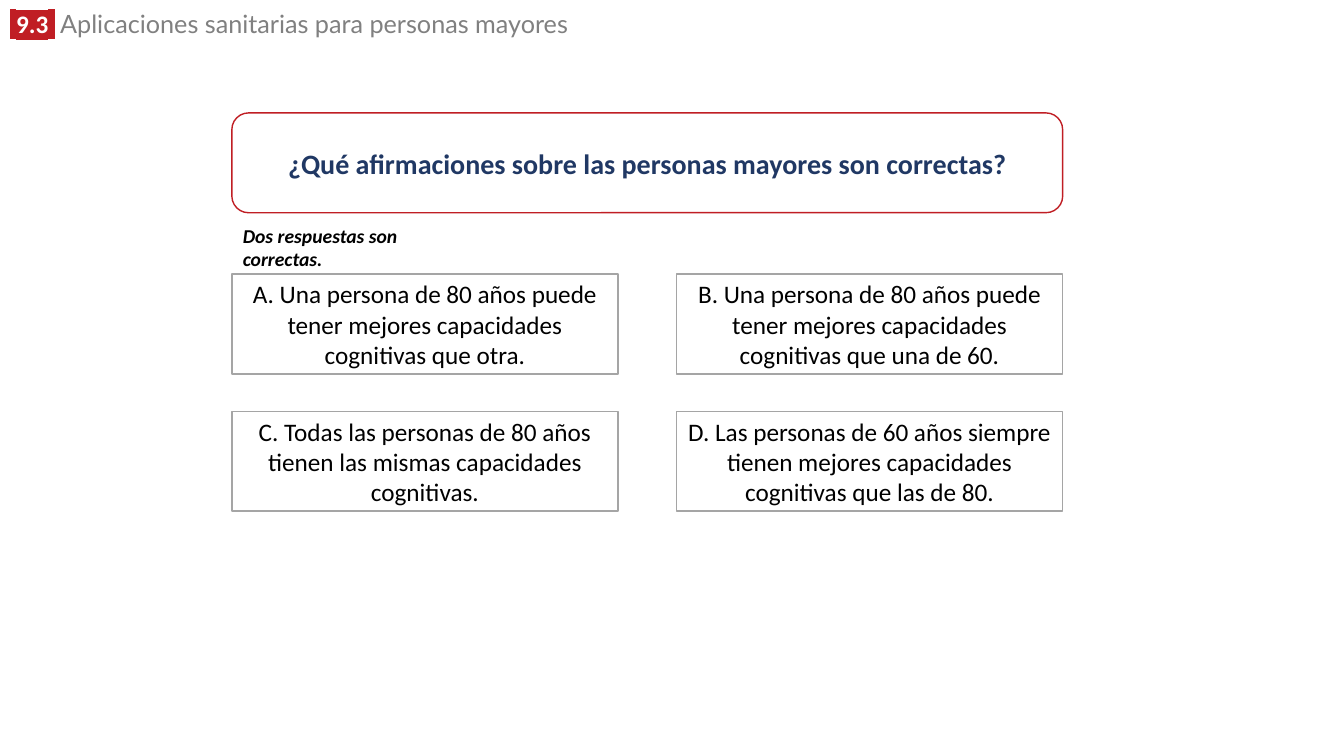
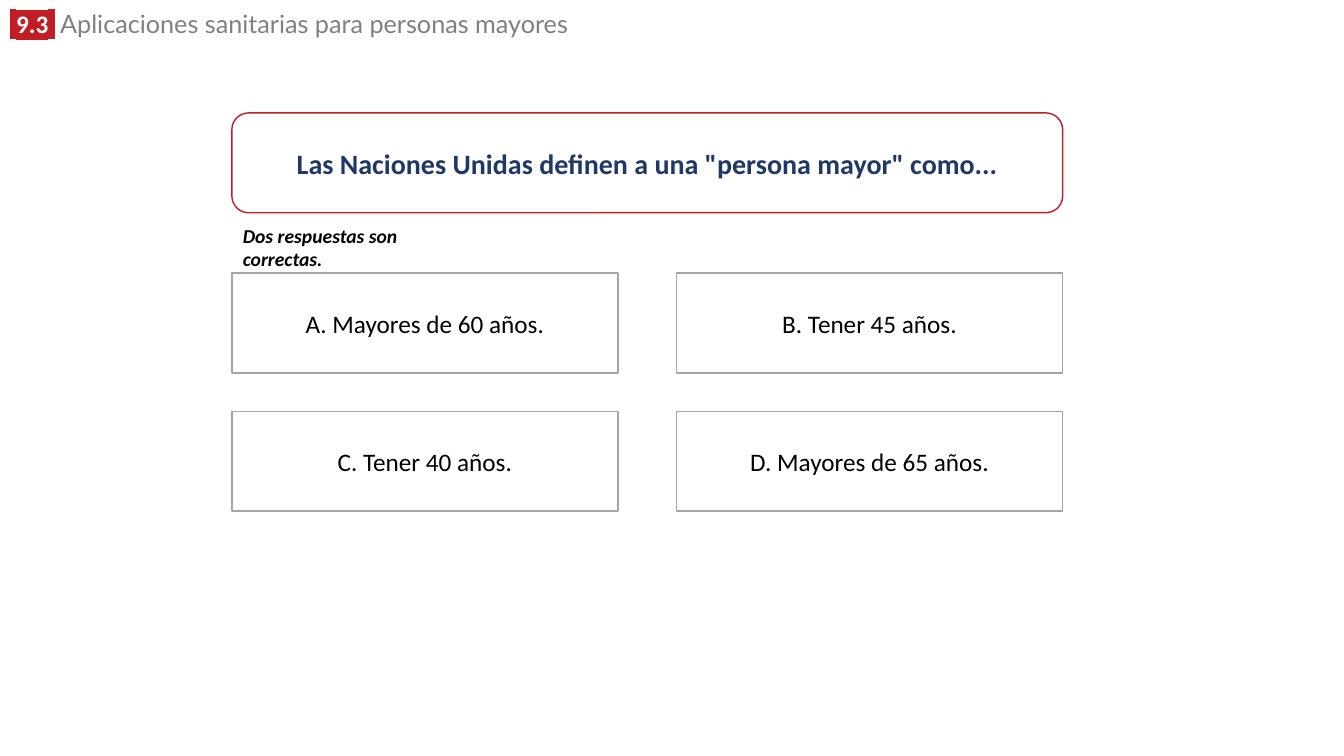
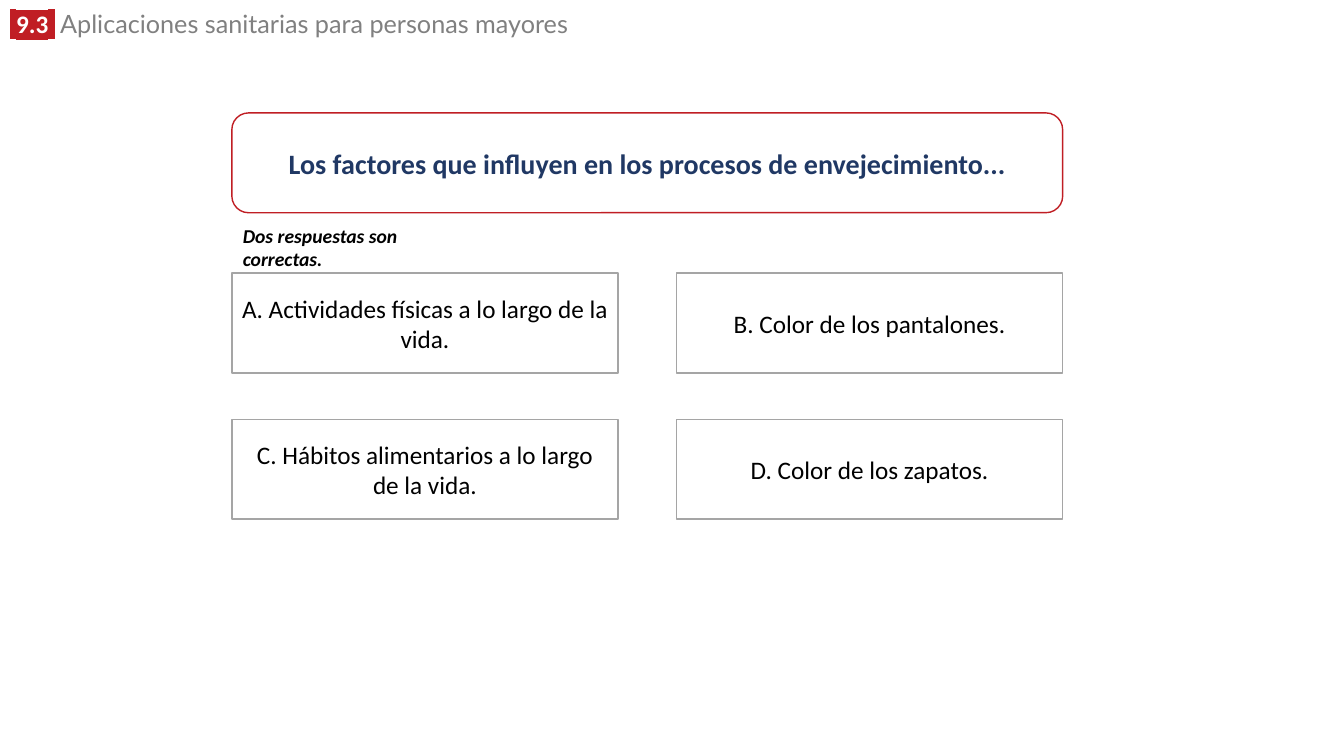
from dataclasses import dataclass

from lxml import etree
from pptx import Presentation
from pptx.dml.color import RGBColor
from pptx.enum.shapes import MSO_SHAPE
from pptx.enum.text import MSO_ANCHOR, MSO_AUTO_SIZE, PP_ALIGN
from pptx.oxml.ns import qn
from pptx.util import Inches, Pt

RECTANGLE, ROUNDED = MSO_SHAPE.RECTANGLE, MSO_SHAPE.ROUNDED_RECTANGLE
TOP, MIDDLE = MSO_ANCHOR.TOP, MSO_ANCHOR.MIDDLE
LEFT, CENTER = PP_ALIGN.LEFT, PP_ALIGN.CENTER
NO_AUTOFIT = MSO_AUTO_SIZE.NONE
TITLE_ONLY = 5


@dataclass(frozen=True)
class Theme:
    red: str = "C01E24"
    navy: str = "203864"
    gray: str = "808080"
    border: str = "A5A5A5"
    black: str = "000000"
    white: str = "FFFFFF"
    body_font: str = "Calibri"
    header_font: str = "Lato"
    header_size: int = 18
    question_size: int = 20
    answer_size: int = 18
    hint_size: int = 14


THEME = Theme()

# Grid, in inches: two answer columns below a question of full grid width
SLIDE_WIDTH, SLIDE_HEIGHT = 13.33, 7.5
GRID_LEFT, GRID_WIDTH = 2.3, 8.24
COLUMN_GAP = 0.58
COLUMN_WIDTH = (GRID_WIDTH - COLUMN_GAP) / 2
BOX_HEIGHT = 0.99
QUESTION_TOP = 1.12
HEADER_BOX = (0, 0.09, 9.52, 0.35)
HINT_BOX = (2.31, 2.17, 2.24, 0.57)

SECTION_NUMBER = "9.3"
SECTION_NAME = "Aplicaciones sanitarias para personas mayores"
HINT = "Dos respuestas son correctas."

# Question, tops of the two answer rows, answers in reading order
QUIZ = [
    ("¿Qué afirmaciones sobre las personas mayores son correctas?", (2.72, 4.08), [
        "A. Una persona de 80 años puede tener mejores capacidades cognitivas que otra.",
        "B. Una persona de 80 años puede tener mejores capacidades cognitivas que una de 60.",
        "C. Todas las personas de 80 años tienen las mismas capacidades cognitivas.",
        "D. Las personas de 60 años siempre tienen mejores capacidades cognitivas que las de 80.",
    ]),
    ('Las Naciones Unidas definen a una "persona mayor" como...', (2.71, 4.08), [
        "A. Mayores de 60 años.",
        "B. Tener 45 años.",
        "C. Tener 40 años.",
        "D. Mayores de 65 años.",
    ]),
    ("Los factores que influyen en los procesos de envejecimiento...", (2.71, 4.16), [
        "A. Actividades físicas a lo largo de la vida.",
        "B. Color de los pantalones.",
        "C. Hábitos alimentarios a lo largo de la vida.",
        "D. Color de los zapatos.",
    ]),
]


def format_font(font, size, color, name=THEME.body_font, bold=False, italic=False):
    font.name, font.size = name, Pt(size)
    font.bold, font.italic = bold, italic
    font.color.rgb = RGBColor.from_string(color)


def highlight(run, color):
    """Put a highlight colour right after the run's fill, as the schema asks."""
    element = etree.Element(qn("a:highlight"))
    etree.SubElement(element, qn("a:srgbClr"), val=color)
    run.font._element.find(qn("a:solidFill")).addnext(element)


def prepare_layout(presentation):
    """Place the section header once, for every slide."""
    layout = presentation.slide_layouts[TITLE_ONLY]
    title = layout.placeholders[0]
    title.left, title.top, title.width, title.height = map(Inches, HEADER_BOX)
    title.text_frame.vertical_anchor = TOP
    title.text_frame.auto_size = NO_AUTOFIT
    return layout


def fill_header(slide):
    paragraph = slide.shapes.title.text_frame.paragraphs[0]
    paragraph.alignment, paragraph.line_spacing = LEFT, 0.8
    badge_parts = [(" ", THEME.header_font), (SECTION_NUMBER, THEME.body_font),
                   (" ", THEME.header_font)]
    for text, font_name in badge_parts:
        run = paragraph.add_run()
        run.text = text
        format_font(run.font, THEME.header_size, THEME.white, font_name, bold=True)
        highlight(run, THEME.red)
    run = paragraph.add_run()
    run.text = f" {SECTION_NAME}"
    format_font(run.font, THEME.header_size, THEME.gray, THEME.header_font)


def add_box(slide, kind, left, top, width, text, line_color, size, color, bold=False):
    shape = slide.shapes.add_shape(
        kind, *map(Inches, (left, top, width, BOX_HEIGHT)))
    shape.shadow.inherit = False
    shape.fill.solid()
    shape.fill.fore_color.rgb = RGBColor.from_string(THEME.white)
    shape.line.color.rgb = RGBColor.from_string(line_color)
    shape.line.width = Pt(1)
    text_frame = shape.text_frame
    text_frame.text = text
    text_frame.word_wrap = True
    text_frame.vertical_anchor = MIDDLE
    paragraph = text_frame.paragraphs[0]
    paragraph.alignment = CENTER
    format_font(paragraph.runs[0].font, size, color, bold=bold)


def add_hint(slide):
    text_frame = slide.shapes.add_textbox(*map(Inches, HINT_BOX)).text_frame
    text_frame.text = HINT
    text_frame.word_wrap = True
    format_font(text_frame.paragraphs[0].runs[0].font, THEME.hint_size,
                THEME.black, bold=True, italic=True)


def add_answers(slide, row_tops, answers):
    for index, answer in enumerate(answers):
        row, column = divmod(index, 2)
        left = GRID_LEFT + column * (COLUMN_WIDTH + COLUMN_GAP)
        add_box(slide, RECTANGLE, left, row_tops[row], COLUMN_WIDTH, answer,
                THEME.border, THEME.answer_size, THEME.black)


def main():
    presentation = Presentation()
    presentation.slide_width = Inches(SLIDE_WIDTH)
    presentation.slide_height = Inches(SLIDE_HEIGHT)
    layout = prepare_layout(presentation)
    for question, row_tops, answers in QUIZ:
        slide = presentation.slides.add_slide(layout)
        fill_header(slide)
        add_box(slide, ROUNDED, GRID_LEFT, QUESTION_TOP, GRID_WIDTH, question,
                THEME.red, THEME.question_size, THEME.navy, bold=True)
        add_hint(slide)
        add_answers(slide, row_tops, answers)
    presentation.save("out.pptx")


if __name__ == "__main__":
    main()
